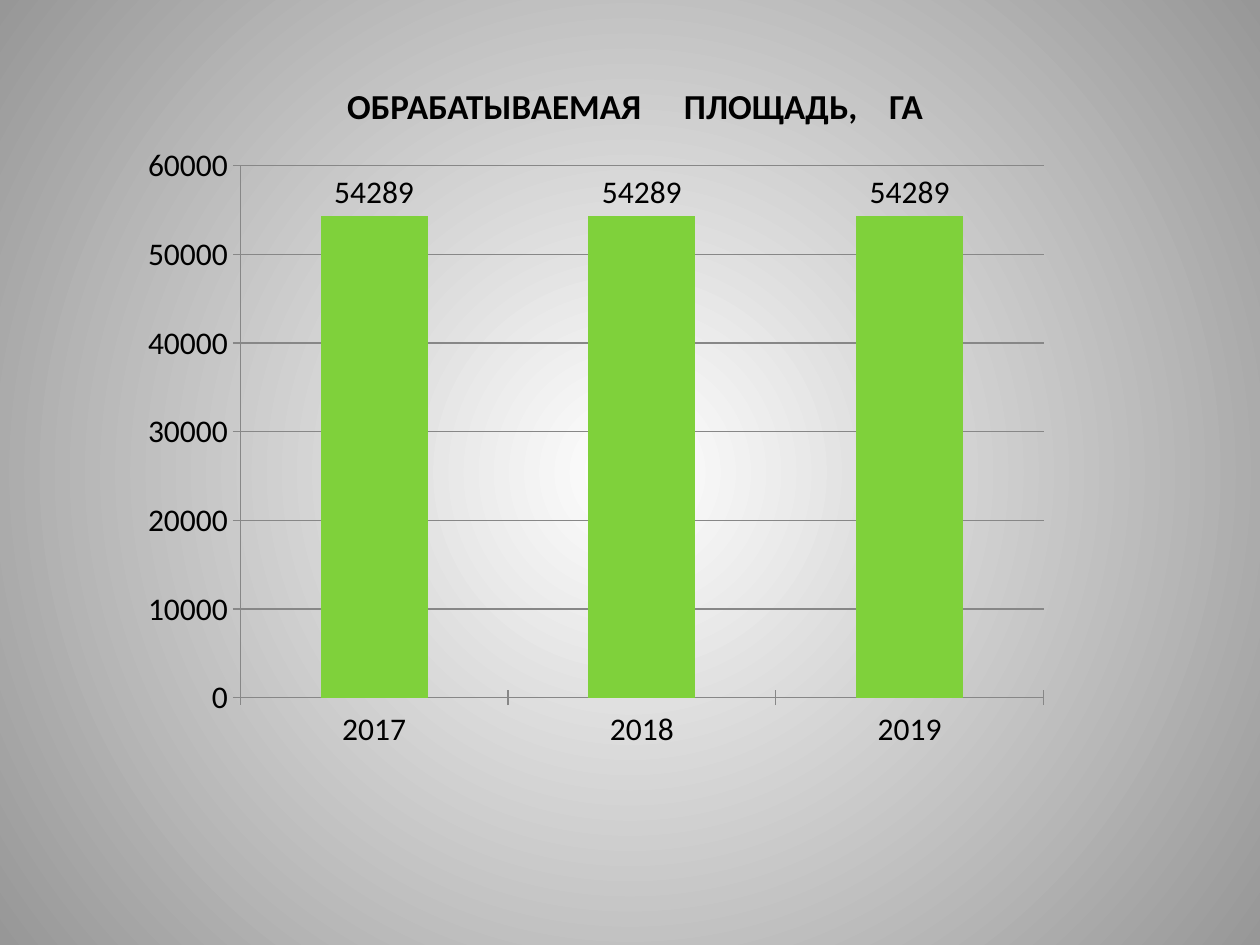
from lxml import etree
from pptx import Presentation
from pptx.chart.data import CategoryChartData
from pptx.dml.color import RGBColor
from pptx.enum.chart import XL_CHART_TYPE, XL_LABEL_POSITION, XL_TICK_MARK
from pptx.enum.text import MSO_ANCHOR, MSO_AUTO_SIZE, PP_ALIGN
from pptx.oxml import parse_xml
from pptx.oxml.ns import nsdecls, qn
from pptx.util import Inches, Pt

COLUMN = XL_CHART_TYPE.COLUMN_CLUSTERED
OUTSIDE = XL_LABEL_POSITION.OUTSIDE_END
CROSS, NONE = XL_TICK_MARK.CROSS, XL_TICK_MARK.NONE
CENTER, MIDDLE = PP_ALIGN.CENTER, MSO_ANCHOR.MIDDLE
GROW = MSO_AUTO_SIZE.SHAPE_TO_FIT_TEXT

TITLE = [
    ("ОБРАБАТЫВАЕМАЯ", {}),
    (" ", {"size": 18, "gap": 20.3}),
    ("ПЛОЩАДЬ,", {}),
    (" ", {"gap": 13.5}),
    ("ГА", {}),
]
YEARS = ["2017", "2018", "2019"]
AREAS = [54289, 54289, 54289]

THEME = {
    "font": "Calibri", "title": 20, "body": 18,
    "ink": "000000", "bar": "7FD13B", "grid": "878787",
    "inner": "FFFFFF", "outer": "979797",
}
TITLE_BOX = (2.34, 0.62, 5.4, 0.44)
CHART_BOX = (0.47, 1.09, 8.98, 5.63)
PLOT = {"x": 0.16, "y": 0.04, "w": 0.715, "h": 0.754}
PLOT = {"x": 0.16, "y": 0.04, "w": 0.71, "h": 0.75}


def color(name):
    return RGBColor.from_string(THEME[name])


def style(font, size, bold=False):
    font.name = THEME["font"]
    font.size = Pt(size)
    font.bold = bold
    font.color.rgb = color("ink")


def write(para, text, size=THEME["title"], bold=True, gap=0):
    run = para.add_run()
    run.text = text
    style(run.font, size, bold)
    if gap:
        run._r.get_or_add_rPr().set("spc", str(round(gap * 100)))


def paint(slide):
    stops = "".join(
        f'<a:gs pos="{pos}"><a:srgbClr val="{THEME[name]}"/></a:gs>'
        for pos, name in ((0, "inner"), (100000, "outer"))
    )
    back = parse_xml(
        f'<p:bg {nsdecls("p", "a")}><p:bgPr><a:gradFill rotWithShape="1">'
        f'<a:gsLst>{stops}</a:gsLst><a:path path="circle">'
        '<a:fillToRect l="50000" t="50000" r="50000" b="50000"/></a:path>'
        '</a:gradFill><a:effectLst/></p:bgPr></p:bg>'
    )
    slide.element.cSld.insert(0, back)


def add_title(slide):
    title = slide.shapes.title
    title.left, title.top, title.width, title.height = map(Inches, TITLE_BOX)
    frame = title.text_frame
    frame.word_wrap = True
    frame.auto_size = GROW
    frame.vertical_anchor = MIDDLE
    para = frame.paragraphs[0]
    para.alignment = CENTER
    for text, form in TITLE:
        write(para, text, **form)


def place_plot(chart):
    area = chart.element.find(".//" + qn("c:plotArea"))
    for old in area.findall(qn("c:layout")):
        area.remove(old)
    layout = etree.Element(qn("c:layout"))
    manual = etree.SubElement(layout, qn("c:manualLayout"))
    parts = [("layoutTarget", "inner"), ("xMode", "edge"), ("yMode", "edge")]
    for tag, val in parts + list(PLOT.items()):
        etree.SubElement(manual, qn("c:" + tag)).set("val", str(val))
    area.insert(0, layout)


def add_chart(slide):
    data = CategoryChartData(number_format="General")
    data.categories = YEARS
    data.add_series("Series 1", AREAS)
    frame = slide.shapes.add_chart(COLUMN, *map(Inches, CHART_BOX), data)
    chart = frame.chart
    chart.has_title = False
    chart.has_legend = False
    style(chart.font, THEME["body"])

    for axis in (chart.category_axis, chart.value_axis):
        axis.major_tick_mark = CROSS
        axis.minor_tick_mark = NONE
        axis.format.line.color.rgb = color("grid")
        axis.format.line.width = Pt(0.75)
    value = chart.value_axis
    value.minimum_scale, value.maximum_scale = 0, 60000
    value.major_unit = 10000
    value.has_major_gridlines = True
    grid = value.major_gridlines.format.line
    grid.color.rgb = color("grid")
    grid.width = Pt(0.75)

    plot = chart.plots[0]
    plot.gap_width = 150
    plot.vary_by_categories = False
    bars = plot.series[0]
    bars.format.fill.solid()
    bars.format.fill.fore_color.rgb = color("bar")
    labels = bars.data_labels
    labels.show_value = True
    labels.position = OUTSIDE
    style(labels.font, THEME["body"])
    place_plot(chart)


def main():
    deck = Presentation()
    deck.slide_width, deck.slide_height = Inches(10), Inches(7.5)
    slide = deck.slides.add_slide(deck.slide_layouts[5])
    paint(slide)
    add_chart(slide)
    add_title(slide)
    deck.save("out.pptx")


if __name__ == "__main__":
    main()
